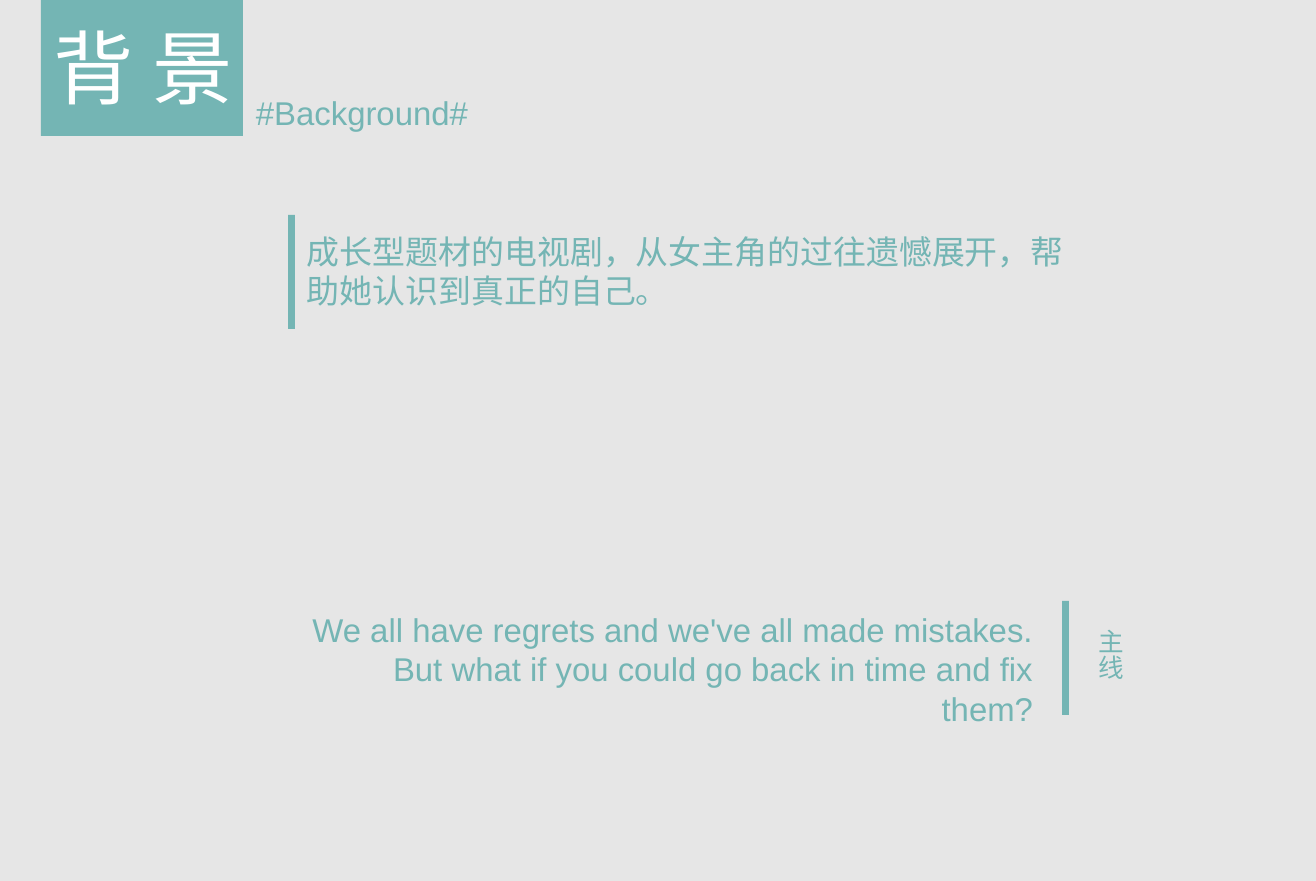
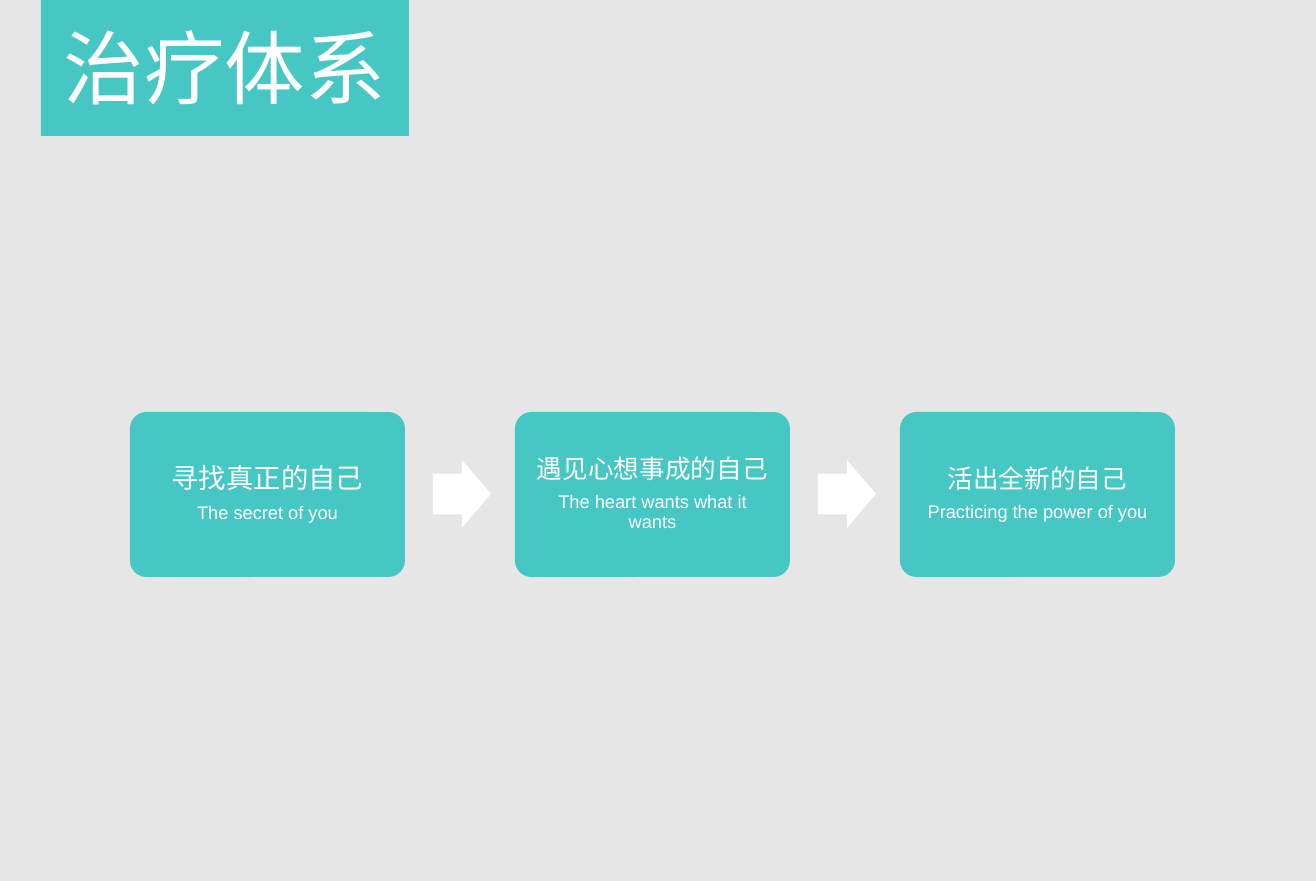
"""Build the background slide and the treatment system slide."""
import dataclasses

import pptx
import pptx.dml.color
import pptx.enum.shapes
import pptx.enum.text
import pptx.util

SHAPE = pptx.enum.shapes.MSO_SHAPE
ALIGN = pptx.enum.text.PP_ALIGN
ANCHOR = pptx.enum.text.MSO_ANCHOR
PX = 914400 / 131.6


@dataclasses.dataclass(frozen=True)
class Theme:
    """Colours, font and type sizes."""
    background: str = "E6E6E6"
    teal: str = "74B5B4"
    turquoise: str = "47C7C4"
    white: str = "FFFFFF"
    font: str = "Arial"
    title: int = 44
    body: int = 18
    label: int = 14
    subtitle: int = 10


THEME = Theme()

BACKGROUND_TITLE = "背 景"
BACKGROUND_TAG = "#Background#"
PREMISE = "成长型题材的电视剧，从女主角的过往遗憾展开，帮助她认识到真正的自己。"
QUESTION = "We all have regrets and we've all made mistakes. But what if you could go back in time and fix them?"
STORYLINE = "主线"
TREATMENT_TITLE = "治疗体系"
STAGES = [
    ("寻找真正的自己", "The secret of you", 15),
    ("遇见心想事成的自己", "The heart wants what it wants", 14),
    ("活出全新的自己", "Practicing the power of you", 14),
]

BAND_LEFT, BAND_HEIGHT = 41, 136
BAR_WIDTH, BAR_HEIGHT = 7, 114
CARD_LEFT, CARD_TOP, CARD_WIDTH, CARD_HEIGHT = 130, 412, 275, 165
CARD_PITCH, CARD_INSET = 385, 13
ARROW_GAP, ARROW_WIDTH, ARROW_HEIGHT = 28, 58, 68


def px(length):
    """Turn pixels into EMU."""
    return pptx.util.Emu(round(length * PX))


def rgb(colour):
    """Turn a hex string into a colour."""
    return pptx.dml.color.RGBColor.from_string(colour)


def format_paragraph(paragraph, size, colour, align):
    """Set the alignment of a paragraph and the font of its runs."""
    paragraph.alignment = align
    for run in paragraph.runs:
        run.font.name = THEME.font
        run.font.size = pptx.util.Pt(size)
        run.font.color.rgb = rgb(colour)


def add_block(slide, kind, box, colour, adjustments=()):
    """Add a filled shape without line or shadow."""
    shape = slide.shapes.add_shape(kind, *map(px, box))
    shape.shadow.inherit = False
    shape.fill.solid()
    shape.fill.fore_color.rgb = rgb(colour)
    shape.line.fill.background()
    for index, value in enumerate(adjustments):
        shape.adjustments[index] = value
    return shape


def add_text(slide, text, box, size, colour, align=ALIGN.LEFT, wrap=True):
    """Add a text box of one paragraph."""
    shape = slide.shapes.add_textbox(*map(px, box))
    frame = shape.text_frame
    frame.word_wrap = wrap
    frame.auto_size = pptx.enum.text.MSO_AUTO_SIZE.SHAPE_TO_FIT_TEXT
    frame.text = text
    format_paragraph(frame.paragraphs[0], size, colour, align)
    return shape


def add_titled_slide(presentation, title, colour, band_width, title_width, align):
    """Add a blank slide with the title on a band at the top."""
    slide = presentation.slides.add_slide(presentation.slide_layouts[6])
    slide.background.fill.solid()
    slide.background.fill.fore_color.rgb = rgb(THEME.background)
    add_block(slide, SHAPE.RECTANGLE, (BAND_LEFT, 0, band_width, BAND_HEIGHT), colour)
    add_text(slide, title, (BAND_LEFT, 12, title_width, 111), THEME.title, THEME.white, align)
    return slide


def add_background_slide(presentation):
    """Add the slide with the premise and the storyline."""
    slide = add_titled_slide(presentation, BACKGROUND_TITLE, THEME.teal, 202, 365, ALIGN.LEFT)
    add_text(slide, BACKGROUND_TAG, (243, 86, 241, 53), THEME.body, THEME.teal, wrap=False)
    add_text(slide, QUESTION, (284, 603, 762, 93), THEME.body, THEME.teal, ALIGN.RIGHT)
    for left, top in ((1062, 601), (288, 215)):
        add_block(slide, SHAPE.RECTANGLE, (left, top, BAR_WIDTH, BAR_HEIGHT), THEME.teal)
    add_text(slide, PREMISE, (294, 225, 788, 93), THEME.body, THEME.teal)
    storyline = add_text(slide, STORYLINE, (1074, 616, 58, 64), THEME.label, THEME.teal, wrap=False)
    storyline.element.txBody.bodyPr.set("vert", "eaVert")


def add_card(slide, left, stage):
    """Add a rounded card with a stage name and its subtitle."""
    name, subtitle, name_size = stage
    box = (left, CARD_TOP, CARD_WIDTH, CARD_HEIGHT)
    card = add_block(slide, SHAPE.ROUNDED_RECTANGLE, box, THEME.turquoise, (0.1,))
    frame = card.text_frame
    frame.word_wrap = True
    frame.vertical_anchor = ANCHOR.MIDDLE
    frame.margin_left = frame.margin_right = px(CARD_INSET)
    frame.margin_top = frame.margin_bottom = px(CARD_INSET)
    frame.text = f"{name}\n{subtitle}"
    for paragraph, size in zip(frame.paragraphs, (name_size, THEME.subtitle)):
        format_paragraph(paragraph, size, THEME.white, ALIGN.CENTER)
        paragraph.line_spacing = 0.9
        paragraph.space_after = pptx.util.Pt(round(size * 0.35))


def add_treatment_slide(presentation):
    """Add the slide with the three stages joined by arrows."""
    slide = add_titled_slide(presentation, TREATMENT_TITLE, THEME.turquoise, 368, 368, ALIGN.CENTER)
    arrow_top = CARD_TOP + (CARD_HEIGHT - ARROW_HEIGHT) // 2
    for index, stage in enumerate(STAGES):
        left = CARD_LEFT + index * CARD_PITCH
        if index:
            arrow_left = left - CARD_PITCH + CARD_WIDTH + ARROW_GAP
            box = (arrow_left, arrow_top, ARROW_WIDTH, ARROW_HEIGHT)
            add_block(slide, SHAPE.RIGHT_ARROW, box, THEME.white, (0.6, 0.5))
        add_card(slide, left, stage)


def main():
    """Build and save the presentation."""
    presentation = pptx.Presentation()
    presentation.slide_width = px(1316)
    presentation.slide_height = px(881)
    add_background_slide(presentation)
    add_treatment_slide(presentation)
    presentation.save("out.pptx")


if __name__ == "__main__":
    main()
